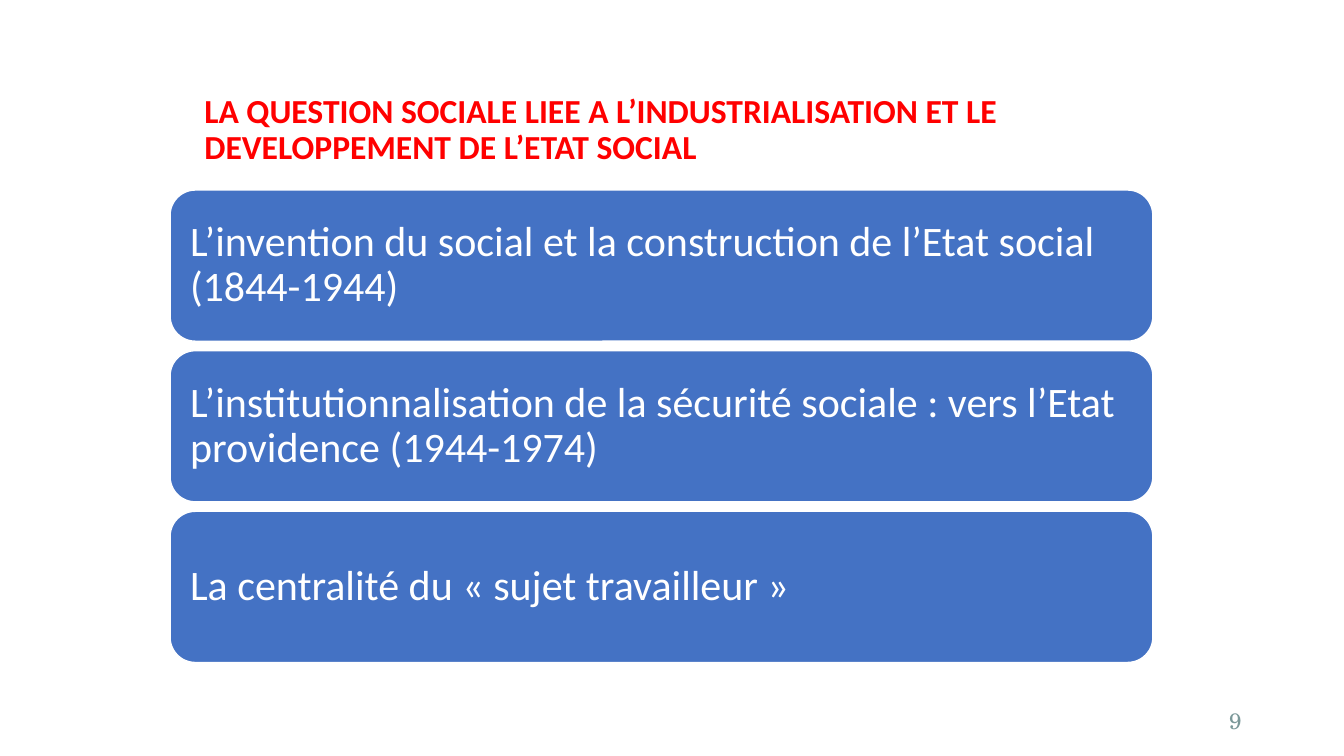
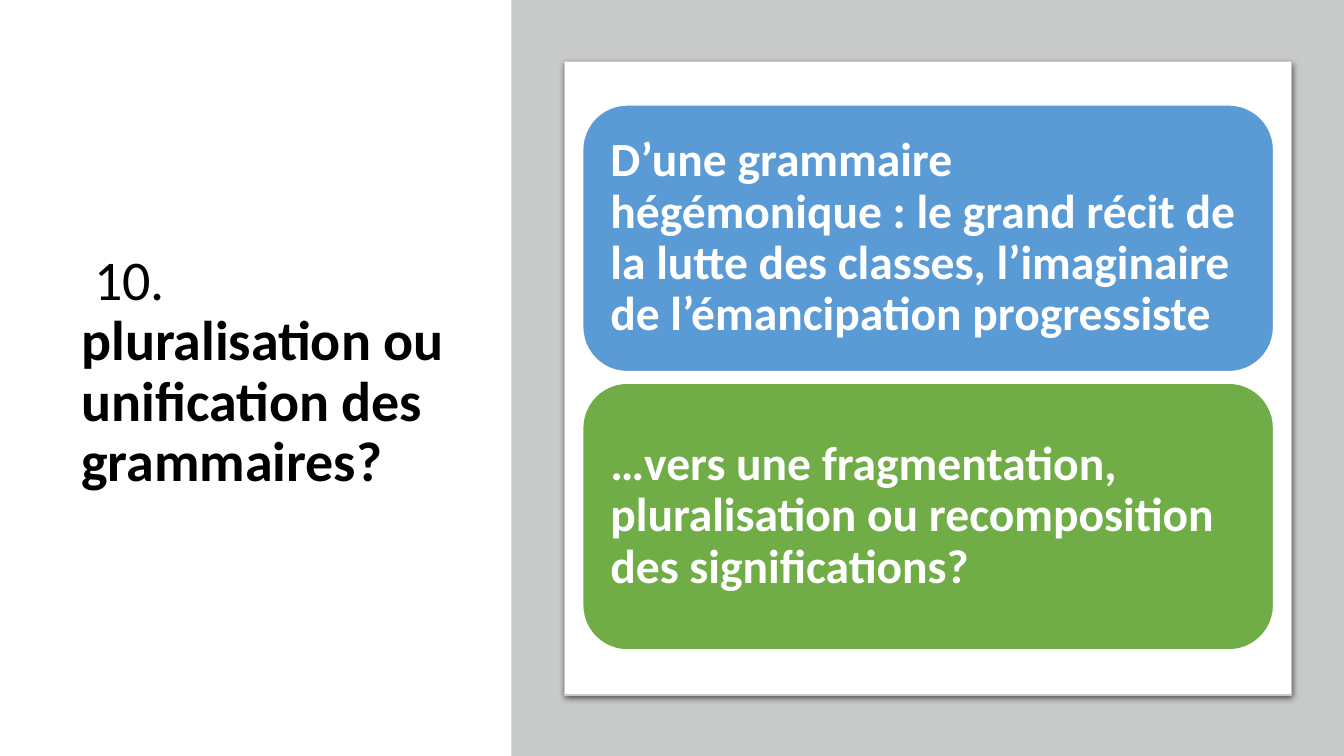
"""Build two slides on the social question, each a title beside or above stacked cards."""
import lxml.etree
import pptx
import pptx.dml.color
import pptx.enum.shapes
import pptx.enum.text
import pptx.oxml
import pptx.util

PX = 9525
WIDTH, HEIGHT = 1280, 720
WHITE, BLACK, RED = "FFFFFF", "000000", "FF0000"
BLUE, SKY, GREEN = "4472C4", "5B9BD5", "70AD47"
GREY, SLATE = "C8CACA", "7B9899"

SLIDES = [
    {
        "title": [("LA QUESTION SOCIALE LIEE A L’INDUSTRIALISATION ET LE "
                   "DEVELOPPEMENT DE L’ETAT SOCIAL", True)],
        "title_box": (185, 84, 831, 81),
        "title_font": {"size": 24, "color": RED},
        "cards": [
            ("L’invention du social et la construction de l’Etat social (1844-1944)", BLUE),
            ("L’institutionnalisation de la sécurité sociale : vers l’Etat providence (1944-1974)", BLUE),
            ("La centralité du « sujet travailleur »", BLUE),
        ],
        "first_card": (162, 181, 936, 144),
        "gap": 9,
        "inset": 12,
        "card_font": {"size": 30, "color": WHITE, "bold": False},
        "number": "9",
    },
    {
        "title": [(" 10.", False), ("pluralisation ou unification des grammaires?", True)],
        "title_box": (68, 66, 385, 578),
        "title_font": {"size": 40, "color": BLACK},
        "panel": (487, 0, 793, HEIGHT),
        "frame": (538, 59, 692, 603),
        "cards": [
            ("D’une grammaire hégémonique : le grand récit de la lutte des classes, "
             "l’imaginaire de l’émancipation progressiste", SKY),
            ("…vers une fragmentation, pluralisation ou recomposition des significations?", GREEN),
        ],
        "first_card": (555, 100, 658, 254),
        "gap": 11,
        "inset": 14,
        "card_font": {"size": 34, "color": WHITE, "bold": True},
    },
]
NUMBER_BOX = (904, 667, 288, 38)
NUMBER_FONT = {"size": 16, "color": SLATE, "name": "TeX Gyre Schola"}
FRAME_TEXT = {
    "word_wrap": True,
    "auto_size": pptx.enum.text.MSO_AUTO_SIZE.NONE,
    "vertical_anchor": pptx.enum.text.MSO_ANCHOR.MIDDLE,
}
SHADOW = (
    '<a:effectLst xmlns:a="http://schemas.openxmlformats.org/drawingml/2006/main">'
    '<a:outerShdw blurRad="57150" dist="19050" dir="5400000" algn="ctr" rotWithShape="0">'
    '<a:srgbClr val="000000"><a:alpha val="63000"/></a:srgbClr>'
    '</a:outerShdw></a:effectLst>'
)


def rgb(value):
    return pptx.dml.color.RGBColor.from_string(value)


def emu(box):
    return [length * PX for length in box]


def set_all(target, values):
    for name, value in values.items():
        setattr(target, name, value)


def write(shape, lines, font, align="LEFT", spacing=0.9, inset=None):
    frame = shape.text_frame
    set_all(frame, FRAME_TEXT)
    if inset is not None:
        sides = ("left", "top", "right", "bottom")
        set_all(frame, {f"margin_{side}": inset * PX for side in sides})
    paragraph = frame.paragraphs[0]
    set_all(paragraph, {
        "alignment": getattr(pptx.enum.text.PP_ALIGN, align),
        "line_spacing": spacing,
    })
    for index, (text, bold) in enumerate(lines):
        if index:
            paragraph.add_line_break()
        run = paragraph.add_run()
        run.text = text
        set_all(run.font, {
            "name": font.get("name", "Calibri"),
            "size": pptx.util.Pt(font["size"]),
            "bold": bold,
        })
        run.font.color.rgb = rgb(font["color"])


def add_block(slide, kind, box, fill, line=None, weight=1):
    block = slide.shapes.add_shape(
        getattr(pptx.enum.shapes.MSO_SHAPE, kind), *emu(box))
    block.shadow.inherit = False
    block.fill.solid()
    block.fill.fore_color.rgb = rgb(fill)
    if line:
        block.line.color.rgb = rgb(line)
        block.line.width = pptx.util.Pt(weight)
    else:
        block.line.fill.background()
    return block


def add_backdrop(slide, panel, frame):
    add_block(slide, "RECTANGLE", panel, GREY)
    sheet = add_block(slide, "RECTANGLE", frame, WHITE, GREY, 0.75)
    properties = sheet.element.spPr
    for effects in properties.findall(pptx.oxml.ns.qn("a:effectLst")):
        properties.replace(effects, lxml.etree.fromstring(SHADOW))


def add_cards(slide, content):
    left, top, width, height = content["first_card"]
    font = content["card_font"]
    for index, (text, fill) in enumerate(content["cards"]):
        box = (left, top + index * (height + content["gap"]), width, height)
        card = add_block(slide, "ROUNDED_RECTANGLE", box, fill, WHITE)
        write(card, [(text, font["bold"])], font, inset=content["inset"])


def add_slide(deck, content):
    slide = deck.slides.add_slide(deck.slide_layouts.get_by_name("Title Only"))
    title = slide.shapes.title
    set_all(title, dict(zip(("left", "top", "width", "height"), emu(content["title_box"]))))
    write(title, content["title"], content["title_font"])
    if "panel" in content:
        add_backdrop(slide, content["panel"], content["frame"])
    add_cards(slide, content)
    if "number" in content:
        number = slide.shapes.add_textbox(*emu(NUMBER_BOX))
        write(number, [(content["number"], False)], NUMBER_FONT, "RIGHT", 1.0)


def main():
    deck = pptx.Presentation()
    set_all(deck, {"slide_width": WIDTH * PX, "slide_height": HEIGHT * PX})
    for content in SLIDES:
        add_slide(deck, content)
    deck.save("out.pptx")


if __name__ == "__main__":
    main()
